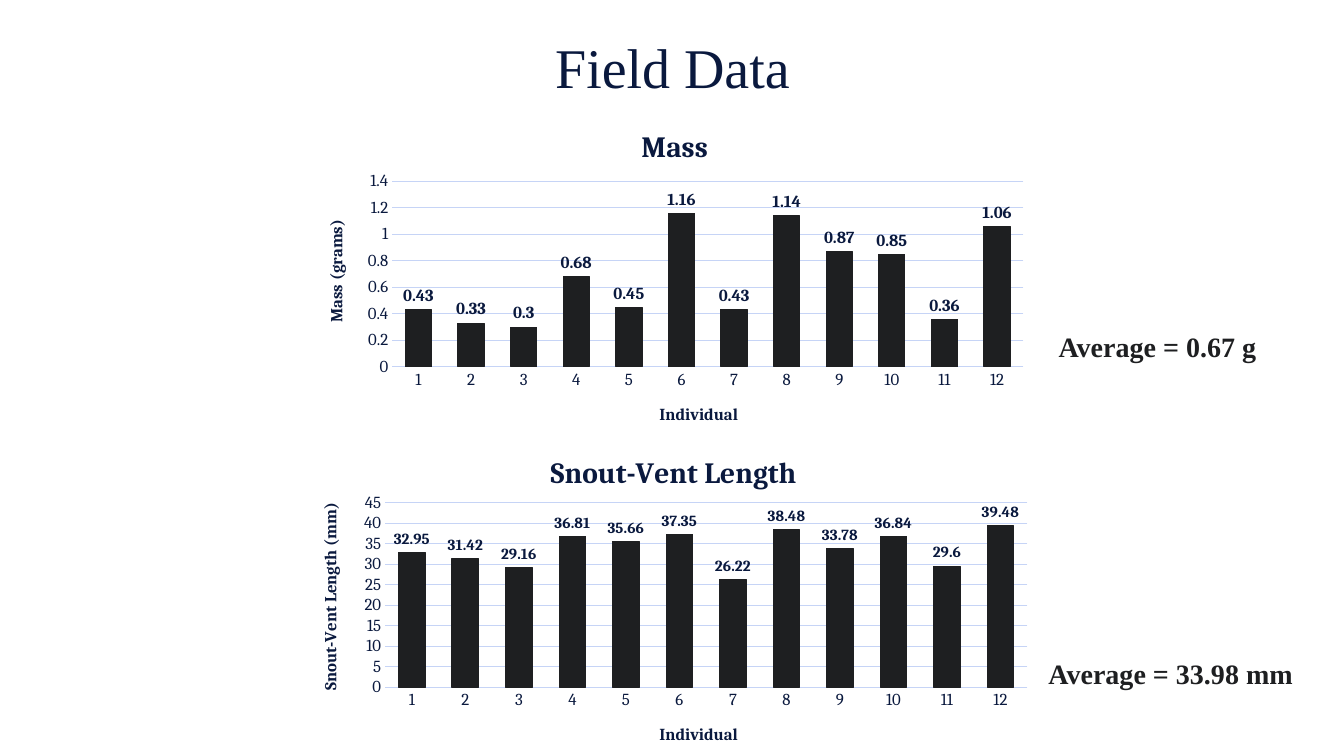
from pptx import Presentation
from pptx.chart.data import CategoryChartData
from pptx.dml.color import RGBColor
from pptx.enum.chart import XL_CHART_TYPE as ChartType
from pptx.enum.chart import XL_LABEL_POSITION as LabelPosition
from pptx.enum.chart import XL_TICK_MARK as TickMark
from pptx.enum.text import MSO_ANCHOR as Anchor
from pptx.enum.text import PP_ALIGN as Align
from pptx.oxml import parse_xml
from pptx.oxml.ns import nsdecls
from pptx.util import Pt

PX = 9144  # one hundredth of an inch
NAVY = RGBColor(0x0A, 0x19, 0x3E)
CHARCOAL = RGBColor(0x1E, 0x1F, 0x21)
GRID_BLUE = RGBColor(0xC6, 0xD4, 0xF6)
TEXT_FONT = "Times New Roman"
CHART_FONT = "Cambria"


class FieldSlide:
    def __init__(self, presentation):
        self.slide = presentation.slides.add_slide(presentation.slide_layouts[5])

    def style(self, font, name, size, color, bold=False):
        font.name, font.size, font.bold = name, Pt(size), bold
        font.color.rgb = color

    def title(self, text, box):
        shape = self.slide.shapes.title
        shape.left, shape.top, shape.width, shape.height = [v * PX for v in box]
        frame = shape.text_frame
        frame.text = text
        frame.vertical_anchor = Anchor.MIDDLE
        frame.paragraphs[0].alignment = Align.CENTER
        self.style(frame.paragraphs[0].runs[0].font, TEXT_FONT, 40, NAVY)

    def note(self, text, box, align):
        shape = self.slide.shapes.add_textbox(*[v * PX for v in box])
        frame = shape.text_frame
        frame.word_wrap = True
        frame.text = text
        frame.paragraphs[0].alignment = align
        self.style(frame.paragraphs[0].runs[0].font, TEXT_FONT, 20, CHARCOAL, True)

    def place(self, parent, index, box, place):
        """Fix a chart part at a slide position, as fractions of the chart box."""
        left, top, width, height = box
        parts = {"x": (place[0] - left) / width, "y": (place[1] - top) / height}
        target = ""
        if len(place) == 4:
            parts.update(w=place[2] / width, h=place[3] / height)
            target = '<c:layoutTarget val="inner"/>'
        modes = '<c:xMode val="edge"/><c:yMode val="edge"/>'
        values = "".join(f'<c:{k} val="{v:.4f}"/>' for k, v in parts.items())
        for layout in parent.xpath("c:layout"):
            parent.remove(layout)
        parent.insert(index, parse_xml(
            f'<c:layout {nsdecls("c")}><c:manualLayout>{target}{modes}{values}'
            "</c:manualLayout></c:layout>"))

    def chart_text(self, title, text, size, box, place):
        title.text_frame.text = text
        run = title.text_frame.paragraphs[0].runs[0]
        self.style(run.font, CHART_FONT, size, NAVY, True)
        self.place(title._element, 1, box, place)

    def axis(self, axis, text, box, place):
        axis.major_tick_mark = axis.minor_tick_mark = TickMark.NONE
        self.style(axis.tick_labels.font, CHART_FONT, 12, NAVY)
        self.chart_text(axis.axis_title, text, 12, box, place)

    def bar_chart(self, name, unit_title, values, scale, label_size, box, plot_box,
                  title_at, value_title_at, category_title_at):
        data = CategoryChartData()
        data.categories = [str(n) for n in range(1, len(values) + 1)]
        data.add_series("Series 1", values)
        frame = self.slide.shapes.add_chart(
            ChartType.COLUMN_CLUSTERED, *[v * PX for v in box], data)
        chart = frame.chart
        self.style(chart.font, CHART_FONT, 10, NAVY)
        chart.has_legend = False
        chart.has_title = True
        self.chart_text(chart.chart_title, name, 21, box, title_at)
        self.place(chart._chartSpace.xpath("c:chart/c:plotArea")[0], 0, box, plot_box)

        # Axes
        self.axis(chart.category_axis, "Individual", box, category_title_at)
        category_line = chart.category_axis.format.line
        category_line.color.rgb, category_line.width = GRID_BLUE, Pt(0.75)
        value_axis = chart.value_axis
        self.axis(value_axis, unit_title, box, value_title_at)
        body = value_axis.axis_title._element.xpath(".//a:bodyPr")[0]
        body.set("rot", "-5400000")
        body.set("vert", "horz")
        value_axis.minimum_scale = 0
        value_axis.maximum_scale, value_axis.major_unit = scale
        value_axis.format.line.fill.background()
        grid = value_axis.major_gridlines.format.line
        grid.color.rgb, grid.width = GRID_BLUE, Pt(0.75)

        # Columns and their values
        plot = chart.plots[0]
        plot.vary_by_categories = False
        plot.gap_width, plot.overlap = 100, -24
        series = plot.series[0]
        series.format.fill.solid()
        series.format.fill.fore_color.rgb = CHARCOAL
        series.format.line.color.rgb = CHARCOAL
        series.format.line.width = Pt(0.75)
        labels = series.data_labels
        labels.show_value = True
        labels.position = LabelPosition.OUTSIDE_END
        self.style(labels.font, CHART_FONT, label_size, NAVY, True)


def main():
    presentation = Presentation()
    presentation.slide_width, presentation.slide_height = 1333 * PX, 750 * PX
    field = FieldSlide(presentation)
    field.title("Field Data", (67, 3, 1200, 125))

    # Charts
    field.bar_chart(
        "Mass", "Mass (grams)",
        (0.43, 0.33, 0.3, 0.68, 0.45, 1.16, 0.43, 1.14, 0.87, 0.85, 0.36, 1.06),
        scale=(1.4, 0.2), label_size=12, box=(304, 100, 726, 339),
        plot_box=(389, 180, 626, 184), title_at=(631, 121),
        value_title_at=(320, 215), category_title_at=(651, 398))
    field.bar_chart(
        "Snout-Vent Length", "Snout-Vent Length (mm)",
        (32.95, 31.42, 29.16, 36.81, 35.66, 37.35,
         26.22, 38.48, 33.78, 36.84, 29.6, 39.48),
        scale=(45, 5), label_size=11, box=(300, 428, 734, 328),
        plot_box=(382, 499, 637, 183), title_at=(541, 445),
        value_title_at=(314, 496), category_title_at=(651, 715))

    # Averages
    field.note("Average = 0.67 g", (1008, 322, 280, 44), Align.CENTER)
    field.note("Average = 33.98 mm", (1030, 646, 280, 44), Align.LEFT)
    presentation.save("out.pptx")


if __name__ == "__main__":
    main()
